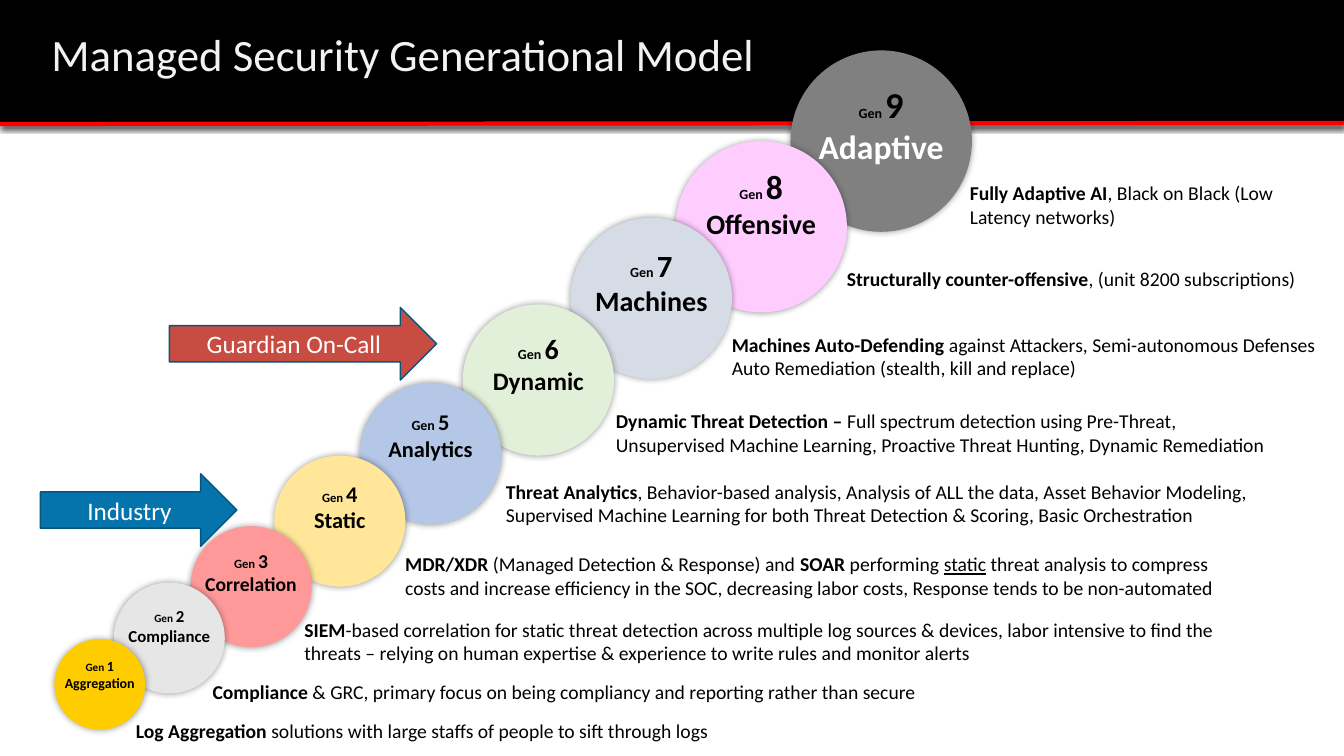
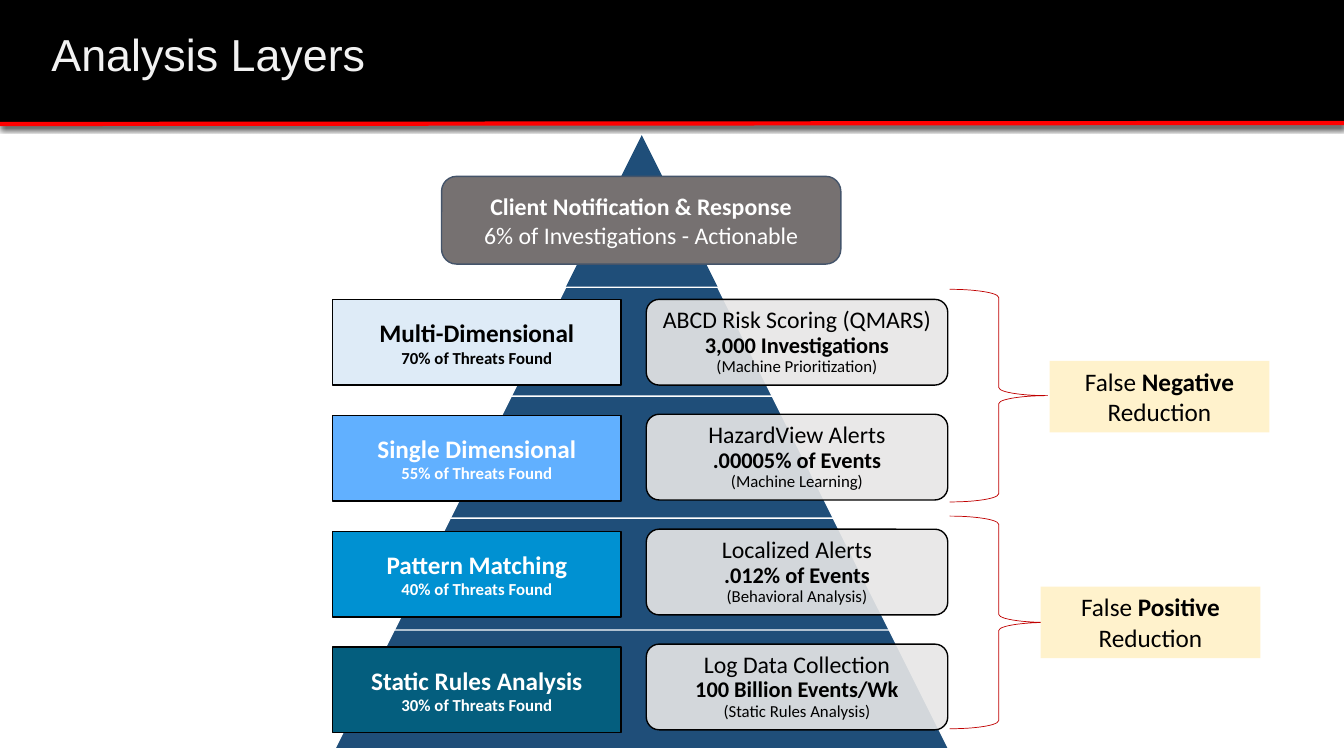
from lxml import etree
from pptx import Presentation
from pptx import util as u
from pptx.dml.color import RGBColor
from pptx.enum import shapes as sh, text as tx
from pptx.oxml import ns

IN, PT = u.Inches, u.Pt
MSO = sh.MSO_SHAPE


class Theme:
    font = "Calibri"
    black, white, red = "000000", "FFFFFF", "FF0000"
    title, edge, navy = "F2F2F2", "04567F", "1F4E79"
    stone, slate, pale = "767171", "44546A", "E7E6E6"
    cream, brace = "FFF2CC", "C00000"
    head, large, lead, strong, note, small = 32, 18, 17, 16, 14, 12


WIDE, TALL = 13.33, 7.5

# number, name, fill, name colour, left, top, size, type sizes (Gen, number, name)
GENS = [
    (9, "Adaptive", "808080", Theme.white, 7.84, 0.5, 1.8, (10, 26, 24)),
    (8, "Offensive", "FFCCFF", Theme.black, 6.7, 1.4, 1.7, (10, 24, 20)),
    (7, "Machines", "D6DCE5", Theme.black, 5.66, 2.16, 1.6, (10, 22, 20)),
    (6, "Dynamic", "E2F0D9", Theme.black, 4.59, 3.02, 1.5, (10, 20, 18)),
    (5, "Analytics", "B4C7E7", Theme.black, 3.57, 3.8, 1.4, (10, 16, 16)),
    (4, "Static", "FFE699", Theme.black, 2.72, 4.52, 1.3, (9, 16, 16)),
    (3, "Correlation", "FF9999", Theme.black, 1.89, 5.22, 1.2, (9, 14, 14)),
    (2, "Compliance", "E6E6E6", Theme.black, 1.13, 5.78, 1.1, (8, 12, 12)),
    (1, "Aggregation", "FFCC00", Theme.black, 0.54, 6.34, 0.9, (8, 10, 10)),
]
INSETS = {8: 0, 2: 0.07}

# left, top, width, height, then runs of (text, style)
NOTES = [
    (1.25, 7.08, 6.01, 0.34, [
        ("Log Aggregation ", "b"),
        ("solutions with large staffs of people to sift through logs", "")]),
    (2.01, 6.7, 7.63, 0.34, [
        ("Compliance", "b"),
        (" & GRC, primary focus on being compliancy and reporting rather than secure", "")]),
    (2.92, 6.08, 9.58, 0.57, [
        ("SIEM", "b"),
        ("-based correlation for static threat detection across multiple log sources & "
         "devices, labor intensive to find the threats – relying on human expertise & "
         "experience to write rules and monitor alerts", "")]),
    (3.92, 5.43, 8.29, 0.57, [
        ("MDR/XDR", "b"), (" (Managed Detection & Response) and ", ""), ("SOAR", "b"),
        (" performing ", ""), ("static", "u"),
        (" threat analysis to compress costs and increase efficiency in the SOC, "
         "decreasing labor costs, Response tends to be non-automated", "")]),
    (4.92, 4.71, 7.7, 0.57, [
        ("Threat Analytics", "b"),
        (", Behavior-based analysis, Analysis of ALL the data, Asset Behavior Modeling, "
         "Supervised Machine Learning for both Threat Detection & Scoring, "
         "Basic Orchestration", "")]),
    (6.01, 4.01, 6.69, 0.57, [
        ("Dynamic Threat Detection – ", "b"),
        ("Full spectrum detection using Pre-Threat, Unsupervised Machine Learning, "
         "Proactive Threat Hunting, Dynamic Remediation", "")]),
    (7.16, 3.25, 6.06, 0.57, [
        ("Machines Auto-Defending ", "b"),
        ("against Attackers, Semi-autonomous Defenses Auto Remediation "
         "(stealth, kill and replace)", "")]),
    (8.3, 2.6, 5.01, 0.34, [
        ("Structurally counter-offensive", "b"), (", (unit 8200 subscriptions)", "")]),
    (9.52, 1.75, 3.29, 0.57, [
        ("Fully Adaptive AI", "b"), (", Black on Black (Low Latency networks)", "")]),
]

ARROWS = [
    ("Guardian On-Call", "C74D42", 1.68, 3.05, 2.65),
    ("Industry", "0574AC", 0.4, 4.7, 1.95),
]

# method, share found, fill, text colour, then the three lines on the right
LAYERS = [
    ("Multi-Dimensional", "70%", "DEEBF7", Theme.black,
     "ABCD Risk Scoring (QMARS)", "3,000 Investigations", "(Machine Prioritization)"),
    ("Single Dimensional", "55%", "61B0FF", Theme.white,
     "HazardView Alerts", ".00005% of Events", "(Machine Learning)"),
    ("Pattern Matching", "40%", "0091D2", Theme.white,
     "Localized Alerts", ".012% of Events", "(Behavioral Analysis)"),
    ("Static Rules Analysis", "30%", "045E7E", Theme.white,
     "Log Data Collection", "100 Billion Events/Wk", "(Static Rules Analysis)"),
]
CUTS = [2.85, 3.93, 5.14, 6.25]

# bold word, brace top, label left, label top
GOALS = [("Positive", 5.12, 10.32, 5.82), ("Negative", 2.87, 10.41, 3.58)]


def paint(shape, fill=None, line=None, width=1.0):
    shape.shadow.inherit = False
    if fill:
        shape.fill.solid()
        shape.fill.fore_color.rgb = RGBColor.from_string(fill)
    else:
        shape.fill.background()
    if line:
        shape.line.color.rgb = RGBColor.from_string(line)
        shape.line.width = PT(width)
    else:
        shape.line.fill.background()
    return shape


def draw(slide, kind, box, fill=None, line=None, width=1.0):
    shape = slide.shapes.add_shape(kind, *map(IN, box))
    return paint(shape, fill, line, width)


def shade(item, alpha, blur, dist, angle):
    """Give the shape or connector a black outer shadow."""
    props = item._element.spPr
    for old in props.findall(ns.qn("a:effectLst")):
        props.remove(old)
    list_ = etree.SubElement(props, ns.qn("a:effectLst"))
    outer = etree.SubElement(list_, ns.qn("a:outerShdw"), blurRad=str(PT(blur)),
                             dist=str(PT(dist)), dir=str(angle * 60000),
                             algn="ctr", rotWithShape="0")
    color = etree.SubElement(outer, ns.qn("a:srgbClr"), val=Theme.black)
    etree.SubElement(color, ns.qn("a:alpha"), val=str(alpha * 1000))


def write(shape, paras, color=Theme.black, align="CENTER", anchor="MIDDLE",
          font=Theme.font, space=None, wrap=True, fit="NONE", pads=None):
    """Fill a shape with paragraphs of runs: (text, size, style[, colour])."""
    frame = shape.text_frame
    frame.word_wrap = wrap
    frame.auto_size = tx.MSO_AUTO_SIZE[fit]
    frame.vertical_anchor = tx.MSO_ANCHOR[anchor]
    if pads:
        (frame.margin_left, frame.margin_top,
         frame.margin_right, frame.margin_bottom) = map(IN, pads)
    for i, runs in enumerate(paras):
        para = frame.add_paragraph() if i else frame.paragraphs[0]
        para.alignment = tx.PP_ALIGN[align]
        if space:
            para.line_spacing = space
        for words, size, style, *tint in runs:
            run = para.add_run()
            run.text = words
            run.font.name, run.font.size = font, PT(size)
            run.font.bold = "b" in style
            run.font.underline = "u" in style
            run.font.color.rgb = RGBColor.from_string(tint[0] if tint else color)


def start(deck, title, font=Theme.font):
    slide = deck.slides.add_slide(deck.slide_layouts[5])
    write(slide.shapes.title, [[(title, Theme.head, "")]], Theme.title,
          "LEFT", font=font, space=0.9)
    return slide


def frame(deck, slide):
    """Put the band, red rule and title place on the shared layout."""
    layout = deck.slide_layouts[5]
    title, *rest = layout.placeholders
    for extra in rest:
        extra._element.getparent().remove(extra._element)
    title.left, title.top, title.width, title.height = map(IN, (0.41, 0.26, 11, 0.62))
    band = draw(slide, MSO.RECTANGLE, (0, 0, WIDE, 1.22), Theme.black)
    rule = slide.shapes.add_connector(sh.MSO_CONNECTOR.STRAIGHT,
                                      *map(IN, (0, 1.23, WIDE, 1.22)))
    rule.line.color.rgb = RGBColor.from_string(Theme.red)
    rule.line.width = PT(3)
    shade(rule, 100, 4, 1, 90)
    for spot, item in enumerate((band, rule), 2):
        layout.shapes._spTree.insert(spot, item._element)


def model(slide):
    for num, name, fill, tint, left, top, size, (tag, digit, word) in GENS:
        ball = draw(slide, MSO.OVAL, (left, top, size, size), fill)
        shade(ball, 40, 5, 0, 0)
        pad = INSETS.get(num, 0.05)
        write(ball, [[("Gen ", tag, "b"), (str(num), digit, "b")],
                     [(name, word, "b", tint)]],
              anchor="TOP", wrap=False, pads=(0, pad, 0, min(pad, 0.05)))
    for *box, runs in NOTES:
        note = slide.shapes.add_textbox(*map(IN, box))
        write(note, [[(words, Theme.note, style) for words, style in runs]],
              align="LEFT", anchor="TOP", fit="SHAPE_TO_FIT_TEXT")
    for words, fill, left, top, wide in ARROWS:
        arrow = draw(slide, MSO.RIGHT_ARROW, (left, top, wide, 0.72), fill, Theme.edge)
        write(arrow, [[(words, Theme.large, "")]], Theme.white)


def tower(slide):
    """Draw the pyramid with one white-edged slab below each cut."""
    left, top, side = 3.32, 1.34, 6.09
    mid, base = left + side / 2, top + side
    draw(slide, MSO.ISOSCELES_TRIANGLE, (left, top, side, side), Theme.navy)
    for cut in CUTS:
        half = (cut - top) / 2
        pen = slide.shapes.build_freeform(IN(mid - half), IN(cut))
        pen.add_line_segments([(IN(mid + half), IN(cut)), (IN(left + side), IN(base)),
                               (IN(left), IN(base))], close=True)
        paint(pen.convert_to_shape(), Theme.navy, Theme.white)


def layers(slide):
    tower(slide)
    top = draw(slide, MSO.ROUNDED_RECTANGLE, (4.38, 1.75, 3.96, 0.87),
               Theme.stone, Theme.slate)
    top.adjustments[0] = 0.17
    write(top, [[("Client Notification & Response", Theme.lead, "b")],
                [("6% of Investigations - Actionable", Theme.lead, "")]], Theme.white)
    for i, (name, share, fill, tint, lead, count, how) in enumerate(LAYERS):
        card = draw(slide, MSO.ROUNDED_RECTANGLE, (6.41, 2.97 + 1.14 * i, 2.99, 0.85),
                    Theme.pale, Theme.black)
        card.adjustments[0] = 0.15
        color = card._element.spPr.find(ns.qn("a:solidFill"))[0]
        etree.SubElement(color, ns.qn("a:alpha"), val="90000")
        write(card, [[(lead, Theme.lead, "")], [(count, Theme.strong, "b")],
                     [(how, Theme.small, "")]], space=0.9, pads=(0.05,) * 4)
        block = draw(slide, MSO.RECTANGLE, (3.3, 2.97 + 1.15 * i, 2.86, 0.85),
                     fill, Theme.black)
        write(block, [[(name, Theme.large, "b")],
                      [(share + " of Threats Found", Theme.small, "b")]], tint)
    for word, high, left, top in GOALS:
        draw(slide, MSO.RIGHT_BRACE, (9.42, high, 0.97, 2.11), None, Theme.brace, 0.5)
        label = draw(slide, MSO.RECTANGLE, (left, top, 2.18, 0.71), Theme.cream)
        write(label, [[("False ", Theme.large, ""), (word, Theme.large, "b"),
                       (" Reduction", Theme.large, "")]],
              anchor="TOP", fit="SHAPE_TO_FIT_TEXT")


def main():
    deck = Presentation()
    deck.slide_width, deck.slide_height = IN(WIDE), IN(TALL)
    first = start(deck, "Managed Security Generational Model")
    frame(deck, first)
    model(first)
    layers(start(deck, "Analysis Layers", "Arial"))
    deck.save("out.pptx")


if __name__ == "__main__":
    main()
